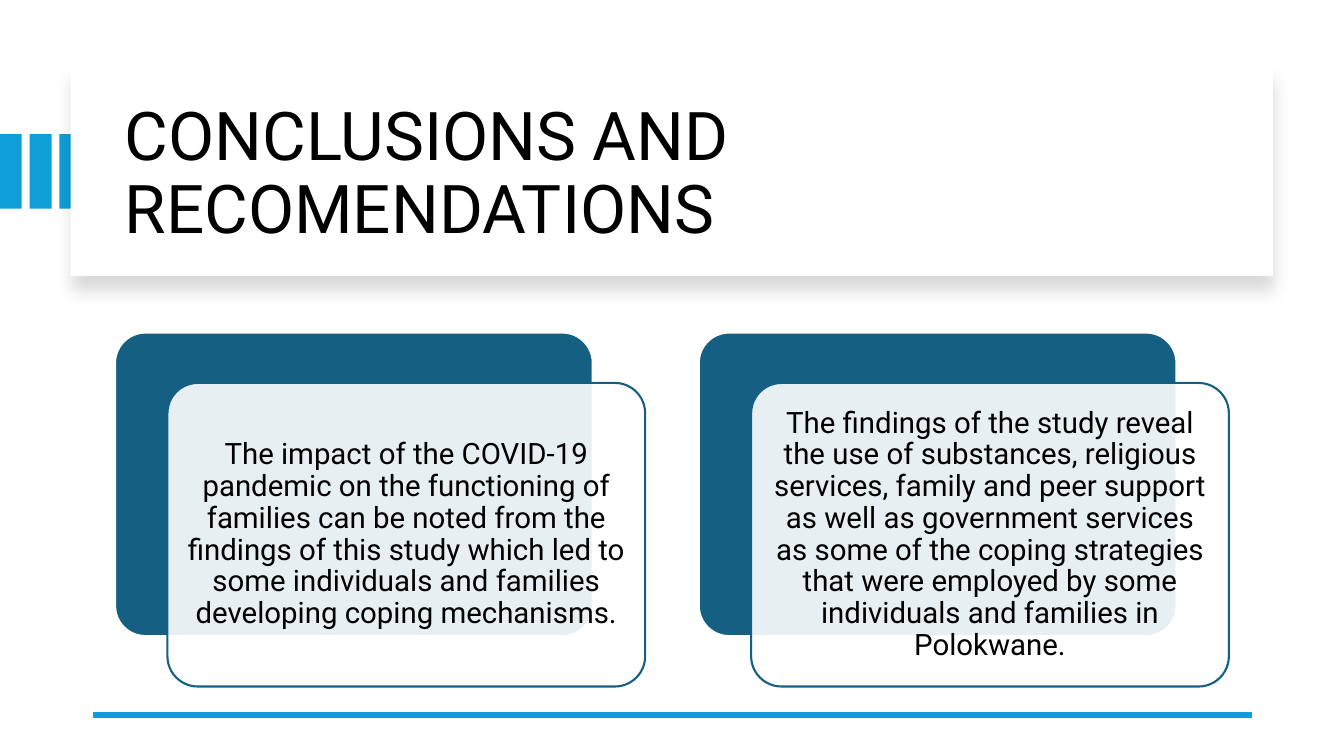
from dataclasses import dataclass

from lxml.etree import SubElement
from pptx import Presentation
from pptx.dml.color import RGBColor
from pptx.enum.shapes import MSO_CONNECTOR, MSO_SHAPE
from pptx.enum.text import MSO_ANCHOR, PP_ALIGN
from pptx.oxml.ns import qn
from pptx.shapes.autoshape import Shape
from pptx.slide import Slide
from pptx.util import Cm, Pt

FONT = "Roboto"
ACCENT = "0F9ED5"
DARK = "156082"
WHITE = "FFFFFF"
BLACK = "000000"

CARD_LEFT, CARD_TOP = 2.9, 8.38
CARD_WIDTH, CARD_HEIGHT = 12.04, 7.65
CARD_PITCH = 14.71
FRONT_SHIFT_X, FRONT_SHIFT_Y = 1.32, 1.27
STRIPE_PITCH = 0.75


@dataclass(frozen=True)
class Area:
    left: float
    top: float
    width: float
    height: float

    def lengths(self) -> tuple[Cm, Cm, Cm, Cm]:
        return Cm(self.left), Cm(self.top), Cm(self.width), Cm(self.height)

    def moved(self, across: float, down: float = 0) -> "Area":
        return Area(self.left + across, self.top + down, self.width, self.height)


FINDINGS = [
    "The impact of the COVID-19 pandemic on the functioning of families can be noted "
    "from the findings of this study which led to some individuals and families "
    "developing coping mechanisms.",
    "The findings of the study reveal the use of substances, religious services, family "
    "and peer support as well as government services as some of the coping strategies "
    "that were employed by some individuals and families in Polokwane.",
]


def color(value: str) -> RGBColor:
    return RGBColor.from_string(value)


def add_block(page: Slide, area: Area, fill: str, line: str | None = None,
              rounded: bool = False, opacity: int = 100) -> Shape:
    kind = MSO_SHAPE.ROUNDED_RECTANGLE if rounded else MSO_SHAPE.RECTANGLE
    block = page.shapes.add_shape(kind, *area.lengths())
    block.shadow.inherit = False
    if rounded:
        block.adjustments[0] = 0.1
    block.fill.solid()
    block.fill.fore_color.rgb = color(fill)
    if opacity < 100:
        fill_color = block.element.spPr.find(qn("a:solidFill")).find(qn("a:srgbClr"))
        SubElement(fill_color, qn("a:alpha"), val=str(opacity * 1000))
    if line:
        block.line.color.rgb = color(line)
        block.line.width = Pt(1.5)
    else:
        block.line.fill.background()
    return block


def cast_shadow(block: Shape) -> None:
    effects = block.element.spPr.find(qn("a:effectLst"))
    shadow = SubElement(effects, qn("a:outerShdw"), blurRad=str(Pt(11)),
                        dist=str(Pt(10)), dir="5400000", algn="t", rotWithShape="0")
    shade = SubElement(shadow, qn("a:srgbClr"), val=BLACK)
    SubElement(shade, qn("a:alpha"), val="15000")


def write(box: Shape, text: str, *, size: float, align: PP_ALIGN,
          inset_x: float, inset_y: float) -> None:
    frame = box.text_frame
    frame.word_wrap = True
    frame.vertical_anchor = MSO_ANCHOR.MIDDLE
    frame.margin_left = frame.margin_right = Cm(inset_x)
    frame.margin_top = frame.margin_bottom = Cm(inset_y)
    para = frame.paragraphs[0]
    para.alignment = align
    para.line_spacing = 0.9
    span = para.add_run()
    span.text = text
    span.font.name = FONT
    span.font.size = Pt(size)
    span.font.color.rgb = color(BLACK)


def add_rule(page: Slide, left: float, right: float, top: float) -> None:
    rule = page.shapes.add_connector(MSO_CONNECTOR.STRAIGHT, Cm(right), Cm(top),
                                     Cm(left), Cm(top))
    rule.line.color.rgb = color(ACCENT)
    rule.line.width = Pt(4.5)
    SubElement(rule._element.spPr, qn("a:effectLst"))


def add_card(page: Slide, area: Area, text: str) -> None:
    add_block(page, area, DARK, line=WHITE, rounded=True)
    front = add_block(page, area.moved(FRONT_SHIFT_X, FRONT_SHIFT_Y), WHITE,
                      line=DARK, rounded=True, opacity=90)
    write(front, text, size=21, align=PP_ALIGN.CENTER, inset_x=0.23, inset_y=0.23)


def main() -> None:
    deck = Presentation()
    deck.slide_width, deck.slide_height = Cm(33.87), Cm(19.05)
    page = deck.slides.add_slide(deck.slide_layouts[6])

    stripe = Area(0, 3.38, 0.55, 1.88)
    for index in range(3):
        add_block(page, stripe.moved(index * STRIPE_PITCH), ACCENT)

    cast_shadow(add_block(page, Area(1.78, 1.7, 30.3, 5.26), WHITE))
    title = page.shapes.add_textbox(*Area(2.9, 2.26, 28.27, 4.32).lengths())
    write(title, "CONCLUSIONS AND RECOMENDATIONS", size=48, align=PP_ALIGN.LEFT,
          inset_x=0.25, inset_y=0.13)

    add_rule(page, 2.34, 31.55, 18.01)

    card = Area(CARD_LEFT, CARD_TOP, CARD_WIDTH, CARD_HEIGHT)
    for index, text in enumerate(FINDINGS):
        add_card(page, card.moved(index * CARD_PITCH), text)

    deck.save("out.pptx")


if __name__ == "__main__":
    main()
